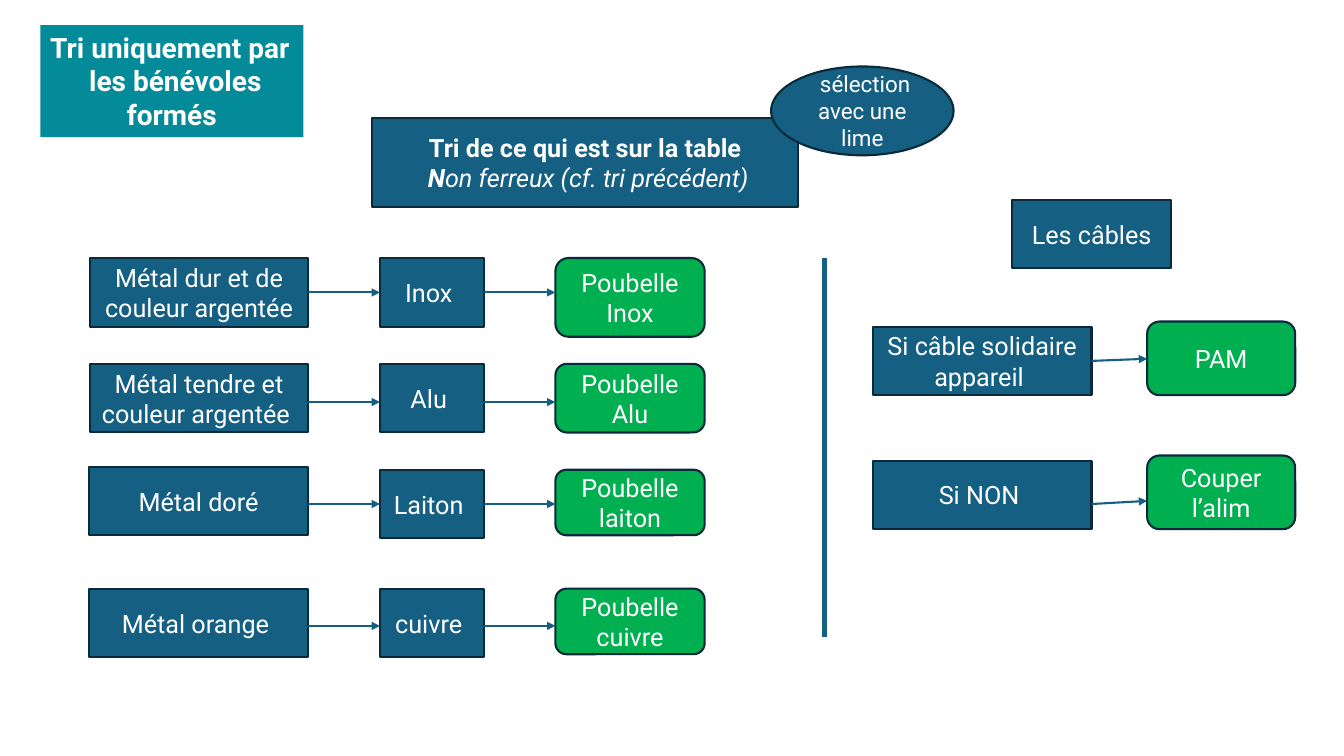
from dataclasses import dataclass

from lxml.etree import SubElement
from pptx import Presentation
from pptx.dml.color import RGBColor
from pptx.enum.shapes import MSO_CONNECTOR, MSO_SHAPE
from pptx.enum.text import MSO_ANCHOR, PP_ALIGN
from pptx.oxml.ns import qn
from pptx.shapes.autoshape import Shape
from pptx.slide import Slide
from pptx.text.text import _Paragraph
from pptx.util import Pt

COLORS = {
    "step": "156082",
    "outline": "092A39",
    "bin": "00B050",
    "notice": "048B9A",
    "text": "FFFFFF",
}
FONT = "Roboto"
STEP_HEIGHT = 49
CRITERION_WIDTH = 156.2
METAL_LEFT, METAL_WIDTH = 271.4, 74.2
BIN_LEFT, BIN_WIDTH = 396.7, 106.6
CASE_LEFT = 623.5
OUTCOME_LEFT, OUTCOME_WIDTH, OUTCOME_HEIGHT = 819.4, 105.8, 52.6


@dataclass(frozen=True)
class Box:
    left: float
    top: float
    width: float
    height: float
    text: str = ""
    fill: str = "step"
    outline: bool = True
    geometry: MSO_SHAPE = MSO_SHAPE.RECTANGLE
    size: float = 18


@dataclass(frozen=True)
class MetalRow:
    criterion: str
    metal: str
    bin: str
    left: float
    criterion_top: float
    top: float
    bin_height: float
    arrow_y: float


@dataclass(frozen=True)
class CableCase:
    condition: str
    outcome: str
    condition_top: float
    outcome_top: float
    arrow_start: float
    arrow_end: float


METAL_ROWS = [
    MetalRow("Métal dur et de couleur argentée", "Inox ", "Poubelle Inox",
             64.1, 184.3, 184.3, 56.2, 208.9),
    MetalRow("Métal tendre et couleur argentée ", "Alu ", "Poubelle Alu",
             64.1, 259.9, 259.9, 49, 287.2),
    MetalRow("Métal doré", "Laiton ", "Poubelle laiton",
             63.5, 333.4, 335.5, 46.8, 360),
    MetalRow("Métal orange ", "cuivre ", "Poubelle cuivre",
             63.5, 420.5, 420.5, 46.8, 447.1),
]
CABLE_CASES = [
    CableCase("Si câble solidaire appareil ", "PAM", 233.3, 229.7, 257.8, 256.3),
    CableCase("Si NON ", "Couper l’alim", 329, 325.4, 360, 357.8),
]


def color(name: str) -> RGBColor:
    return RGBColor.from_string(COLORS[name])


def style_paragraph(paragraph: _Paragraph, size: float, bold: bool = False) -> None:
    paragraph.alignment = PP_ALIGN.CENTER
    paragraph.font.name = FONT
    paragraph.font.size = Pt(size)
    paragraph.font.bold = bold
    paragraph.font.color.rgb = color("text")


def draw_box(slide: Slide, box: Box) -> Shape:
    shape = slide.shapes.add_shape(
        box.geometry, Pt(box.left), Pt(box.top), Pt(box.width), Pt(box.height))
    shape.shadow.inherit = False
    shape.fill.solid()
    shape.fill.fore_color.rgb = color(box.fill)
    if box.outline:
        shape.line.color.rgb = color("outline")
        shape.line.width = Pt(1.5)
    else:
        shape.line.fill.background()
    frame = shape.text_frame
    frame.word_wrap = True
    frame.vertical_anchor = MSO_ANCHOR.MIDDLE
    if box.text:
        frame.text = box.text
        style_paragraph(frame.paragraphs[0], box.size)
    return shape


def draw_line(slide: Slide, start: tuple[float, float], end: tuple[float, float],
              width: float = 1.5, arrow: bool = True) -> None:
    connector = slide.shapes.add_connector(
        MSO_CONNECTOR.STRAIGHT, Pt(start[0]), Pt(start[1]), Pt(end[0]), Pt(end[1]))
    connector.line.color.rgb = color("step")
    connector.line.width = Pt(width)
    properties = connector._element.spPr
    if arrow:
        SubElement(properties.find(qn("a:ln")), qn("a:tailEnd"), type="triangle")
    SubElement(properties, qn("a:effectLst"))


def draw_header(slide: Slide) -> None:
    table_sort = draw_box(slide, Box(265.7, 84.2, 304.6, 63.4)).text_frame
    heading, subtitle = table_sort.paragraphs[0], table_sort.add_paragraph()
    heading.text = "Tri de ce qui est sur la table"
    style_paragraph(heading, 18, bold=True)
    style_paragraph(subtitle, 18)
    for text, bold, italic in [(" ", True, False), ("N", True, True),
                               ("on ferreux (cf. tri précédent)", False, True)]:
        run = subtitle.add_run()
        run.text = text
        run.font.bold = bold
        run.font.italic = italic

    notice = draw_box(slide, Box(28.8, 18, 187.9, 79.9, fill="notice",
                                 outline=False)).text_frame
    notice.vertical_anchor = MSO_ANCHOR.TOP
    notice.text = "Tri uniquement par\n les bénévoles formés"
    for paragraph in notice.paragraphs:
        style_paragraph(paragraph, 20, bold=True)
    notice.paragraphs[0].alignment = PP_ALIGN.LEFT

    draw_box(slide, Box(550.8, 47.5, 130.3, 63.4, " sélection avec une lime",
                        geometry=MSO_SHAPE.OVAL, size=16))


def draw_metal_row(slide: Slide, row: MetalRow) -> None:
    criterion_right = 64.1 + CRITERION_WIDTH
    draw_box(slide, Box(row.left, row.criterion_top, criterion_right - row.left,
                        STEP_HEIGHT, row.criterion))
    draw_box(slide, Box(METAL_LEFT, row.top, METAL_WIDTH, STEP_HEIGHT, row.metal))
    draw_box(slide, Box(BIN_LEFT, row.top, BIN_WIDTH, row.bin_height, row.bin,
                        "bin", geometry=MSO_SHAPE.ROUNDED_RECTANGLE))
    for start, end in [(criterion_right, METAL_LEFT),
                       (METAL_LEFT + METAL_WIDTH, BIN_LEFT)]:
        draw_line(slide, (start, row.arrow_y), (end, row.arrow_y))


def draw_cable_case(slide: Slide, case: CableCase) -> None:
    draw_box(slide, Box(CASE_LEFT, case.condition_top, CRITERION_WIDTH,
                        STEP_HEIGHT, case.condition))
    draw_box(slide, Box(OUTCOME_LEFT, case.outcome_top, OUTCOME_WIDTH,
                        OUTCOME_HEIGHT, case.outcome, "bin",
                        geometry=MSO_SHAPE.ROUNDED_RECTANGLE))
    draw_line(slide, (CASE_LEFT + CRITERION_WIDTH, case.arrow_start),
              (OUTCOME_LEFT, case.arrow_end))


def main() -> None:
    presentation = Presentation()
    presentation.slide_width = Pt(960)
    presentation.slide_height = Pt(540)
    slide = presentation.slides.add_slide(presentation.slide_layouts[6])

    draw_header(slide)
    for row in METAL_ROWS:
        draw_metal_row(slide, row)
    draw_line(slide, (589, 184.3), (589, 455), width=3, arrow=False)
    draw_box(slide, Box(722.9, 142.6, 113.8, STEP_HEIGHT, "Les câbles"))
    for case in CABLE_CASES:
        draw_cable_case(slide, case)

    presentation.save("out.pptx")


if __name__ == "__main__":
    main()
